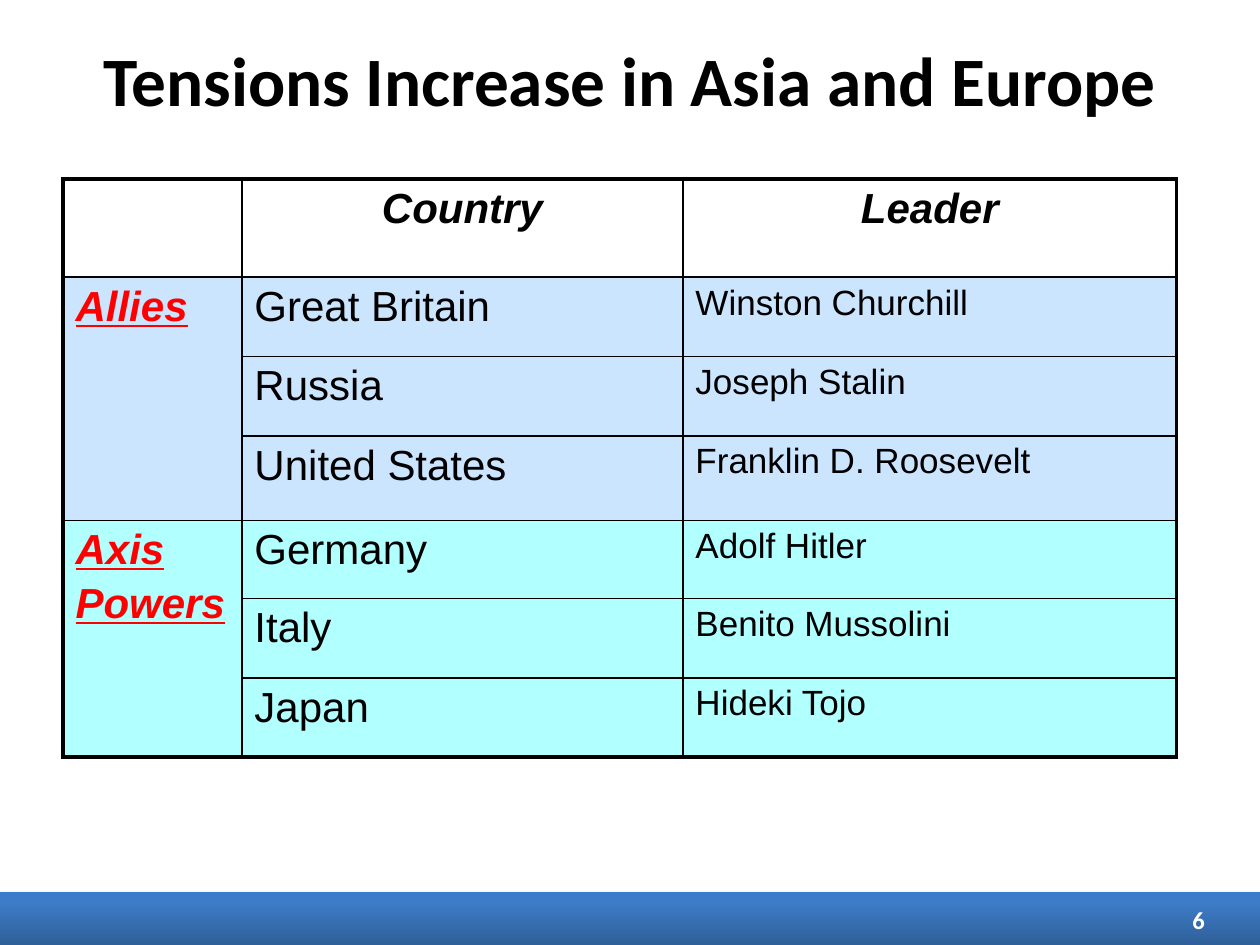
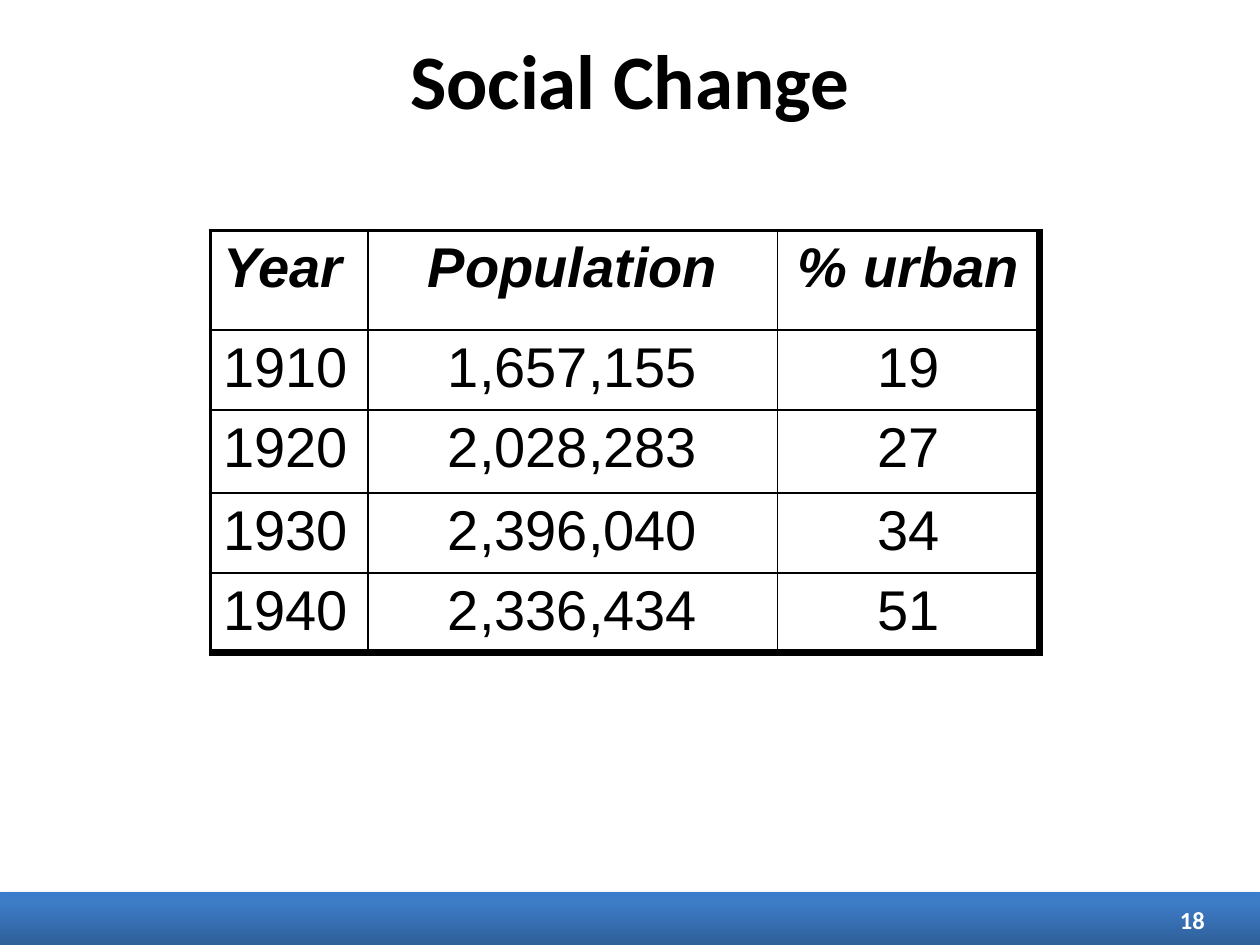
from lxml import etree
from pptx import Presentation
from pptx.dml.color import RGBColor
from pptx.enum.shapes import MSO_SHAPE
from pptx.enum.text import MSO_ANCHOR, PP_ALIGN
from pptx.oxml import parse_xml
from pptx.oxml.ns import nsdecls, qn
from pptx.util import Inches, Pt

LEFT, CENTER, RIGHT = PP_ALIGN.LEFT, PP_ALIGN.CENTER, PP_ALIGN.RIGHT
MIDDLE = MSO_ANCHOR.MIDDLE
RECTANGLE = MSO_SHAPE.RECTANGLE

# Shared look
BLACK, WHITE, RED = "000000", "FFFFFF", "FF0000"
BAND_STOPS = [(0, "2F5F99"), (80, "3D7CC7"), (100, "3A7CCB")]
TITLE_FONT, TABLE_FONT = "Calibri", "Arial"
INNER_LINE = 1

# Leaders slide: (group lines, row fill, members)
LEADER_HEADER = ["Country", "Leader"]
ALLIANCES = [
    (["Allies"], "99CCFF", [
        ("Great Britain", "Winston Churchill"),
        ("Russia", "Joseph Stalin"),
        ("United States", "Franklin D. Roosevelt"),
    ]),
    (["Axis", "Powers"], "66FFFF", [
        ("Germany", "Adolf Hitler"),
        ("Italy", "Benito Mussolini"),
        ("Japan", "Hideki Tojo"),
    ]),
]
LEADER_COLUMNS = [1.42, 3.5, 3.92]
LEADER_ROWS = [0.78, 0.63, 0.63, 0.67, 0.62, 0.63, 0.63]

# Population slide
POPULATION = [
    ("Year", "Population", "% urban"),
    ("1910", "1,657,155", "19"),
    ("1920", "2,028,283", "27"),
    ("1930", "2,396,040", "34"),
    ("1940", "2,336,434", "51"),
]
POPULATION_COLUMNS = [1.25, 3.25, 2.08]
POPULATION_ROWS = [0.79, 0.62, 0.66, 0.58, 0.62]


def color(value):
    return RGBColor.from_string(value)


def write(frame, lines, size, font=TABLE_FONT, fill=BLACK, align=LEFT,
          bold=False, italic=False, underline=False):
    for index, line in enumerate(lines):
        para = frame.add_paragraph() if index else frame.paragraphs[0]
        para.alignment = align
        if index:
            para.space_before = Pt(4)
        span = para.add_run()
        span.text = line
        span.font.name = font
        span.font.size = Pt(size)
        span.font.color.rgb = color(fill)
        span.font.bold = bold
        span.font.italic = italic
        span.font.underline = underline


def add_text(page, place, text, size, fill, align):
    box = page.shapes.add_textbox(*map(Inches, place))
    box.text_frame.word_wrap = True
    box.text_frame.vertical_anchor = MIDDLE
    write(box.text_frame, [text], size, TITLE_FONT, fill, align, bold=True)


def add_band(page):
    band = page.shapes.add_shape(
        RECTANGLE, Inches(0), Inches(7.08), Inches(10), Inches(0.42))
    band.line.fill.background()
    stops = "".join(
        f'<a:gs pos="{position * 1000}"><a:srgbClr val="{value}"/></a:gs>'
        for position, value in BAND_STOPS)
    properties = band.element.spPr
    gradient = parse_xml(
        f'<a:gradFill {nsdecls("a")} rotWithShape="1"><a:gsLst>{stops}</a:gsLst>'
        '<a:lin ang="16200000" scaled="0"/></a:gradFill>')
    properties.find(qn("a:prstGeom")).addnext(gradient)
    properties.append(parse_xml(
        f'<a:effectLst {nsdecls("a")}>'
        f'<a:outerShdw blurRad="{Pt(3.1)}" dist="{Pt(1.8)}" dir="5400000" '
        f'rotWithShape="0"><a:srgbClr val="{BLACK}"><a:alpha val="35000"/>'
        '</a:srgbClr></a:outerShdw></a:effectLst>'))


def add_page(deck, title, title_size, number):
    page = deck.slides.add_slide(deck.slide_layouts[6])
    add_band(page)
    add_text(page, (0.5, 0, 9, 1.25), title, title_size, BLACK, CENTER)
    add_text(page, (7.33, 7.1, 2.33, 0.4), number, 14, WHITE, RIGHT)
    return page


def add_grid(page, left, top, columns, rows):
    frame = page.shapes.add_table(
        len(rows), len(columns), Inches(left), Inches(top),
        Inches(sum(columns)), Inches(sum(rows)))
    table = frame.table
    table.first_row = table.horz_banding = False
    for column, width in zip(table.columns, columns):
        column.width = Inches(width)
    for row, height in zip(table.rows, rows):
        row.height = Inches(height)
    return table


def draw_borders(table, left, right, top, bottom):
    """Thin inner lines and a heavier frame, given side by side in points."""
    last_row, last_column = len(table.rows) - 1, len(table.columns) - 1
    for row in range(last_row + 1):
        for column in range(last_column + 1):
            cell = table.cell(row, column)
            end = row + (cell.span_height if cell.is_merge_origin else 1) - 1
            sides = {
                "lnL": left if column == 0 else INNER_LINE,
                "lnR": right if column == last_column else INNER_LINE,
                "lnT": top if row == 0 else INNER_LINE,
                "lnB": bottom if end == last_row else INNER_LINE,
            }
            properties = cell._tc.get_or_add_tcPr()
            for side, width in sides.items():
                line = etree.SubElement(
                    properties, qn(f"a:{side}"), w=str(Pt(width)))
                solid = etree.SubElement(line, qn("a:solidFill"))
                etree.SubElement(solid, qn("a:srgbClr"), val=BLACK)
            cell.fill.background()


def tint(cell, value):
    cell.fill.solid()
    cell.fill.fore_color.rgb = color(value)
    shade = cell._tc.tcPr.find(qn("a:solidFill")).find(qn("a:srgbClr"))
    etree.SubElement(shade, qn("a:alpha"), val="50000")


def build_leaders(deck):
    page = add_page(deck, "Tensions Increase in Asia and Europe", 39.6, "6")
    table = add_grid(page, 0.5, 1.42, LEADER_COLUMNS, LEADER_ROWS)

    # Group cells span their members' rows
    starts = []
    row = 1
    for _, _, members in ALLIANCES:
        starts.append(row)
        row += len(members)
        table.cell(starts[-1], 0).merge(table.cell(row - 1, 0))
    draw_borders(table, 2.25, 2.25, 2.25, 2.25)

    for column, heading in enumerate(LEADER_HEADER, 1):
        write(table.cell(0, column).text_frame, [heading], 24,
              align=CENTER, bold=True, italic=True)
    for start, (group, fill, members) in zip(starts, ALLIANCES):
        write(table.cell(start, 0).text_frame, group, 24, fill=RED,
              bold=True, italic=True, underline=True)
        for row, (country, leader) in enumerate(members, start):
            write(table.cell(row, 1).text_frame, [country], 24)
            write(table.cell(row, 2).text_frame, [leader], 20)
            for column in range(len(LEADER_COLUMNS)):
                tint(table.cell(row, column), fill)


def build_population(deck):
    page = add_page(deck, "Social Change", 44, "18")
    table = add_grid(page, 1.67, 1.83, POPULATION_COLUMNS, POPULATION_ROWS)
    draw_borders(table, 2.25, 4.5, 2.25, 4.5)
    for row, values in enumerate(POPULATION):
        for column, value in enumerate(values):
            write(table.cell(row, column).text_frame, [value], 32,
                  align=CENTER if column else LEFT,
                  bold=row == 0, italic=row == 0)


def main():
    deck = Presentation()
    deck.slide_width, deck.slide_height = Inches(10), Inches(7.5)
    build_leaders(deck)
    build_population(deck)
    deck.save("out.pptx")


if __name__ == "__main__":
    main()
